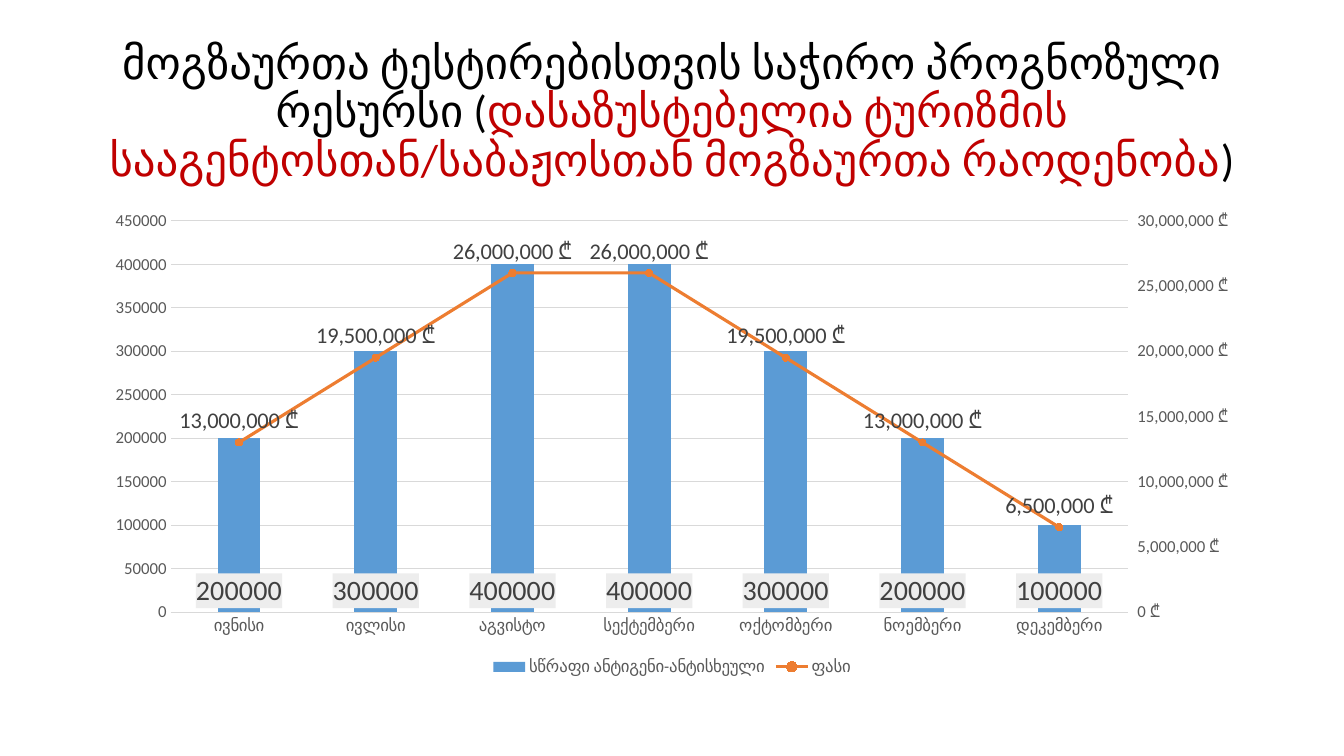
import copy

import lxml.etree
import pptx
import pptx.chart.data
import pptx.dml.color
import pptx.enum.chart
import pptx.enum.text
import pptx.oxml
import pptx.oxml.ns
import pptx.util

Pt = pptx.util.Pt
qn = pptx.oxml.ns.qn
XL = pptx.enum.chart

MONTHS = ["ივნისი", "ივლისი", "აგვისტო", "სექტემბერი", "ოქტომბერი", "ნოემბერი", "დეკემბერი"]
TESTS = [200000, 300000, 400000, 400000, 300000, 200000, 100000]
PRICES = [13000000, 19500000, 26000000, 26000000, 19500000, 13000000, 6500000]
LARI = r"#,##0\ [$₾-437]"


def colour(value):
    return pptx.dml.color.RGBColor.from_string(value)


def add_element(parent, name, value):
    lxml.etree.SubElement(parent, qn(name)).set("val", str(value))


class SlideBuilder:
    font_name = "Calibri"
    black, red = "000000", "C00000"
    grey, label_grey, line_grey, label_fill = "595959", "404040", "D9D9D9", "EDEDED"
    blue, orange = "5B9BD5", "ED7D31"

    def __init__(self, slide):
        self.slide = slide

    def style_font(self, font, size, value):
        font.name = self.font_name
        font.size = Pt(size)
        font.color.rgb = colour(value)

    def title(self, left, top, width, height, runs):
        shape = self.slide.shapes.title
        shape.left, shape.top, shape.width, shape.height = map(Pt, (left, top, width, height))
        frame = shape.text_frame
        frame.word_wrap = True
        frame.auto_size = pptx.enum.text.MSO_AUTO_SIZE.NONE
        frame.vertical_anchor = pptx.enum.text.MSO_ANCHOR.MIDDLE
        paragraph = frame.paragraphs[0]
        paragraph.alignment = pptx.enum.text.PP_ALIGN.CENTER
        paragraph.line_spacing = 0.9
        for text, value in runs:
            run = paragraph.add_run()
            run.text = text
            self.style_font(run.font, 32, value)

    def chart(self, left, top, width, height, data):
        frame = self.slide.shapes.add_chart(
            XL.XL_CHART_TYPE.COLUMN_CLUSTERED, Pt(left), Pt(top), Pt(width), Pt(height), data)
        chart = frame.chart
        chart.has_title = False
        self.style_font(chart.font, 10, self.black)
        chart.has_legend = True
        chart.legend.position = XL.XL_LEGEND_POSITION.BOTTOM
        chart.legend.include_in_layout = False
        self.style_font(chart.legend.font, 12, self.grey)
        return chart

    def axes(self, chart, maximum, step):
        for axis in (chart.category_axis, chart.value_axis):
            axis.major_tick_mark = axis.minor_tick_mark = XL.XL_TICK_MARK.NONE
            self.style_font(axis.tick_labels.font, 12, self.grey)
        lines = chart.value_axis.major_gridlines.format.line, chart.category_axis.format.line
        for line in lines:
            line.color.rgb = colour(self.line_grey)
            line.width = Pt(0.75)
        value_axis = chart.value_axis
        value_axis.format.line.fill.background()
        value_axis.minimum_scale, value_axis.maximum_scale = 0, maximum
        value_axis.major_unit = step
        value_axis.tick_labels.number_format = "General"
        value_axis.tick_labels.number_format_is_linked = False

    def line_on_right_axis(self, chart, maximum, step, number_format):
        """Move the last bar series to a line plot with its own value axis."""
        bar_plot = chart.plots[0]._element
        series = bar_plot.findall(qn("c:ser"))[-1]
        for inverted in series.findall(qn("c:invertIfNegative")):
            series.remove(inverted)
        line_plot = pptx.oxml.parse_xml(
            '<c:lineChart xmlns:c="http://schemas.openxmlformats.org/drawingml/2006/chart">'
            '<c:grouping val="standard"/><c:varyColors val="0"/></c:lineChart>')
        line_plot.append(series)
        category_id, value_id = "50010", "50020"
        for name, value in (("c:marker", 1), ("c:axId", category_id), ("c:axId", value_id)):
            add_element(line_plot, name, value)
        bar_plot.addnext(line_plot)

        # Secondary axes: a visible value axis and a hidden category axis
        value_axis = chart.value_axis._element
        right_axis = copy.deepcopy(value_axis)
        hidden_axis = copy.deepcopy(chart.category_axis._element)
        right_axis.remove(right_axis.find(qn("c:majorGridlines")))
        right_axis.find(qn("c:numFmt")).set("formatCode", number_format)
        settings = (
            (right_axis, {"c:axId": value_id, "c:crossAx": category_id, "c:axPos": "r",
                          "c:crosses": "max", "c:majorTickMark": "out", "c:majorUnit": step}),
            (hidden_axis, {"c:axId": category_id, "c:crossAx": value_id, "c:delete": 1}),
        )
        for axis, values in settings:
            for name, value in values.items():
                axis.find(qn(name)).set("val", str(value))
        right_axis.find(qn("c:scaling")).find(qn("c:max")).set("val", str(maximum))
        value_axis.addnext(right_axis)
        right_axis.addnext(hidden_axis)

    def labels(self, series, size, position, number_format):
        labels = series.data_labels
        labels.show_value = True
        labels.position = position
        labels.number_format = number_format
        labels.number_format_is_linked = False
        self.style_font(labels.font, size, self.label_grey)
        return labels

    def bars(self, plot):
        plot.gap_width, plot.overlap = 219, -27
        plot.vary_by_categories = False
        series = plot.series[0]
        series.format.fill.solid()
        series.format.fill.fore_color.rgb = colour(self.blue)
        labels = self.labels(series, 20, XL.XL_LABEL_POSITION.INSIDE_BASE, "General")
        background = pptx.oxml.parse_xml(
            '<c:spPr xmlns:c="http://schemas.openxmlformats.org/drawingml/2006/chart" '
            'xmlns:a="http://schemas.openxmlformats.org/drawingml/2006/main">'
            f'<a:solidFill><a:srgbClr val="{self.label_fill}"/></a:solidFill></c:spPr>')
        labels._element.find(qn("c:txPr")).addprevious(background)

    def line(self, plot, number_format):
        series = plot.series[0]
        series.smooth = False
        series.format.line.color.rgb = colour(self.orange)
        series.format.line.width = Pt(2.25)
        marker = series.marker
        marker.style = XL.XL_MARKER_STYLE.CIRCLE
        marker.size = 5
        marker.format.fill.solid()
        marker.format.fill.fore_color.rgb = colour(self.orange)
        marker.format.line.color.rgb = colour(self.orange)
        # 16 pt keeps a gap between neighbouring price labels
        self.labels(series, 16, XL.XL_LABEL_POSITION.ABOVE, number_format)


def main():
    presentation = pptx.Presentation()
    presentation.slide_width, presentation.slide_height = Pt(960), Pt(540)
    slide = presentation.slides.add_slide(presentation.slide_layouts[5])
    builder = SlideBuilder(slide)

    # Title
    builder.title(66, 28.75, 828, 104.4, [
        ("მოგზაურთა ტესტირებისთვის საჭირო პროგნოზული რესურსი (", builder.black),
        ("დასაზუსტებელია ტურიზმის სააგენტოსთან/საბაჟოსთან მოგზაურთა რაოდენობა", builder.red),
        (")", builder.black),
    ])

    # Tests as columns, price as a line
    data = pptx.chart.data.CategoryChartData()
    data.categories = MONTHS
    data.add_series("სწრაფი ანტიგენი-ანტისხეული", TESTS)
    data.add_series("ფასი", PRICES, LARI)
    chart = builder.chart(66, 143.75, 828, 342.6, data)
    builder.axes(chart, 450000, 50000)
    builder.line_on_right_axis(chart, 30000000, 5000000, LARI)
    column_plot, line_plot = chart.plots
    builder.bars(column_plot)
    builder.line(line_plot, LARI)

    presentation.save("out.pptx")


if __name__ == "__main__":
    main()
